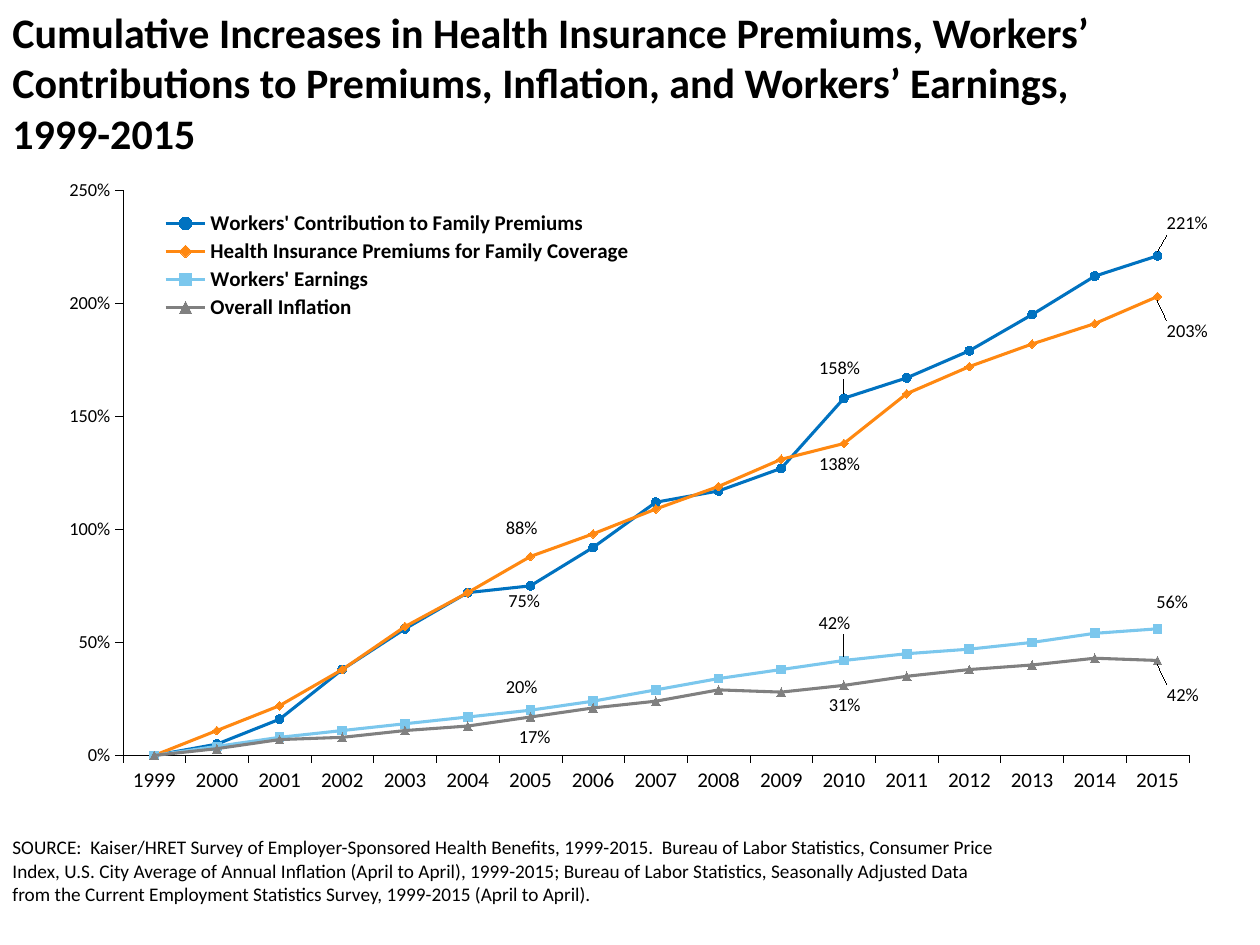
import pptx
import pptx.chart.data
import pptx.dml.color
import pptx.enum.chart
import pptx.enum.text
import pptx.oxml
import pptx.oxml.ns
import pptx.util

Pt = pptx.util.Pt
CHART_NS = pptx.oxml.ns.nsdecls("c")
CHART_WIDTH, CHART_HEIGHT = 678, 360


def color(hex_string):
    return pptx.dml.color.RGBColor.from_string(hex_string)


def manual_layout(x, y, width=None, height=None, inner=False):
    """Layout element for a chart part, from lengths in points."""
    parts = '<c:layoutTarget val="inner"/>' if inner else ""
    if width:
        parts += '<c:xMode val="edge"/><c:yMode val="edge"/>'
    for tag, length, whole in (("x", x, CHART_WIDTH), ("y", y, CHART_HEIGHT),
                               ("w", width, CHART_WIDTH), ("h", height, CHART_HEIGHT)):
        if length is not None:
            parts += f'<c:{tag} val="{length / whole:.4f}"/>'
    return pptx.oxml.parse_xml(
        f"<c:layout {CHART_NS}><c:manualLayout>{parts}</c:manualLayout></c:layout>")


presentation = pptx.Presentation()
presentation.slide_width, presentation.slide_height = Pt(720), Pt(540)
slide = presentation.slides.add_slide(presentation.slide_layouts[6])

# Title and source note
title = ("Cumulative Increases in Health Insurance Premiums, Workers’ Contributions "
         "to Premiums, Inflation, and Workers’ Earnings, 1999-2015")
source = ("SOURCE:  Kaiser/HRET Survey of Employer-Sponsored Health Benefits, 1999-2015.  "
          "Bureau of Labor Statistics, Consumer Price Index, U.S. City Average of Annual "
          "Inflation (April to April), 1999-2015; Bureau of Labor Statistics, Seasonally "
          "Adjusted Data from the Current Employment Statistics Survey, 1999-2015 "
          "(April to April).")
for words, top, width, height, size, bold in (
        (title, 0, 678, 96, 24, True),
        (source, 474, 578, 48, 11, False)):
    frame = slide.shapes.add_textbox(0, Pt(top), Pt(width), Pt(height)).text_frame
    frame.word_wrap = True
    frame.vertical_anchor = pptx.enum.text.MSO_ANCHOR.TOP
    run = frame.paragraphs[0].add_run()
    run.text = words
    run.font.name, run.font.size, run.font.bold = "Calibri", Pt(size), bold
    run.font.color.rgb = color("000000")

# Growth since 1999 in percent; labels: year -> (side, shift right, shift down)
MARKER = pptx.enum.chart.XL_MARKER_STYLE
ABOVE = pptx.enum.chart.XL_LABEL_POSITION.ABOVE
BELOW = pptx.enum.chart.XL_LABEL_POSITION.BELOW
measures = [
    ("Workers' Contribution to Family Premiums", "0072C0", MARKER.CIRCLE,
     [0, 5, 16, 38, 56, 72, 75, 92, 112, 117, 127, 158, 167, 179, 195, 212, 221],
     {2005: (BELOW, -3.5, -2.5), 2010: (ABOVE, -2.5, -5.5), 2015: (ABOVE, 17, -6.5)}),
    ("Health Insurance Premiums for Family Coverage", "FF8811", MARKER.DIAMOND,
     [0, 11, 22, 38, 57, 72, 88, 98, 109, 119, 131, 138, 160, 172, 182, 191, 203],
     {2005: (ABOVE, -5, -4.5), 2010: (BELOW, -2.5, 0.5), 2015: (BELOW, 17, 8.5)}),
    ("Workers' Earnings", "7BC7ED", MARKER.SQUARE,
     [0, 4, 8, 11, 14, 17, 20, 24, 29, 34, 38, 42, 45, 47, 50, 54, 56],
     {2005: (ABOVE, -5, -1.5), 2010: (ABOVE, -5.5, -9.5), 2015: (ABOVE, 8.5, -3.5)}),
    ("Overall Inflation", "808080", MARKER.TRIANGLE,
     [0, 3, 7, 8, 11, 13, 17, 21, 24, 29, 28, 31, 35, 38, 40, 43, 42],
     {2005: (BELOW, 2.5, 0), 2010: (BELOW, 0.5, 0), 2015: (BELOW, 14.5, 8.5)}),
]
growth = pptx.chart.data.CategoryChartData(number_format="0%")
growth.categories = [str(year) for year in range(1999, 2016)]
for name, _, _, percents, _ in measures:
    growth.add_series(name, [percent / 100 for percent in percents])

# Line chart
chart = slide.shapes.add_chart(
    pptx.enum.chart.XL_CHART_TYPE.LINE_MARKERS,
    Pt(12.24), Pt(102.24), Pt(CHART_WIDTH), Pt(CHART_HEIGHT), growth).chart
chart.has_title = False
chart.font.name, chart.font.size = "Calibri", Pt(10.5)
chart.font.color.rgb = color("000000")

# Axes
for axis in (chart.category_axis, chart.value_axis):
    axis.has_major_gridlines = False
    axis.major_tick_mark = pptx.enum.chart.XL_TICK_MARK.OUTSIDE
    axis.minor_tick_mark = pptx.enum.chart.XL_TICK_MARK.NONE
    axis.format.line.width = Pt(0.25)
    axis.format.line.color.rgb = color("000000")
chart.category_axis.tick_labels.font.size = Pt(12)
percent_axis = chart.value_axis
percent_axis.minimum_scale, percent_axis.maximum_scale = 0, 2.5
percent_axis.major_unit = 0.5
percent_axis.tick_labels.number_format = "0%"
percent_axis.tick_labels.number_format_is_linked = False

# Legend in the upper left of the plot
chart.has_legend = True
legend = chart.legend
legend.position = pptx.enum.chart.XL_LEGEND_POSITION.BOTTOM
legend.include_in_layout = False
legend.font.size, legend.font.bold = Pt(12), True

# Fixed places for plot and legend instead of the automatic ones
plot_area = chart._chartSpace.chart.plotArea
for part in (plot_area, legend._element):
    for automatic in part.findall(pptx.oxml.ns.qn("c:layout")):
        part.remove(automatic)
plot_area.insert(0, manual_layout(58, 6.5, 609.5, 323, inner=True))
legend._element.find(pptx.oxml.ns.qn("c:legendPos")).addnext(
    manual_layout(82, 16.5, 266, 66))

# Lines, markers and the labels of selected years
for line, (_, shade, marker, _, labels) in zip(chart.plots[0].series, measures):
    line.smooth = False
    line.format.line.width = Pt(1.75)
    line.format.line.color.rgb = color(shade)
    line.marker.style, line.marker.size = marker, 5
    line.marker.format.fill.solid()
    line.marker.format.fill.fore_color.rgb = color(shade)
    line.marker.format.line.color.rgb = color(shade)
    line.data_labels.show_value = False
    for year, (side, _, _) in labels.items():
        line.points[year - 1999].data_label.position = side
    label_group = line._element.find(pptx.oxml.ns.qn("c:dLbls"))
    for index, (_, right, down) in zip(label_group.xpath("c:dLbl/c:idx"), labels.values()):
        index.addnext(manual_layout(right, down))
    label_group.append(pptx.oxml.parse_xml(
        f'<c:extLst {CHART_NS}><c:ext uri="{{CE6537A1-D6FC-4f65-9D91-7224C49458BB}}" '
        'xmlns:c15="http://schemas.microsoft.com/office/drawing/2012/chart">'
        '<c15:showLeaderLines val="1"/></c:ext></c:extLst>'))

presentation.save("out.pptx")
